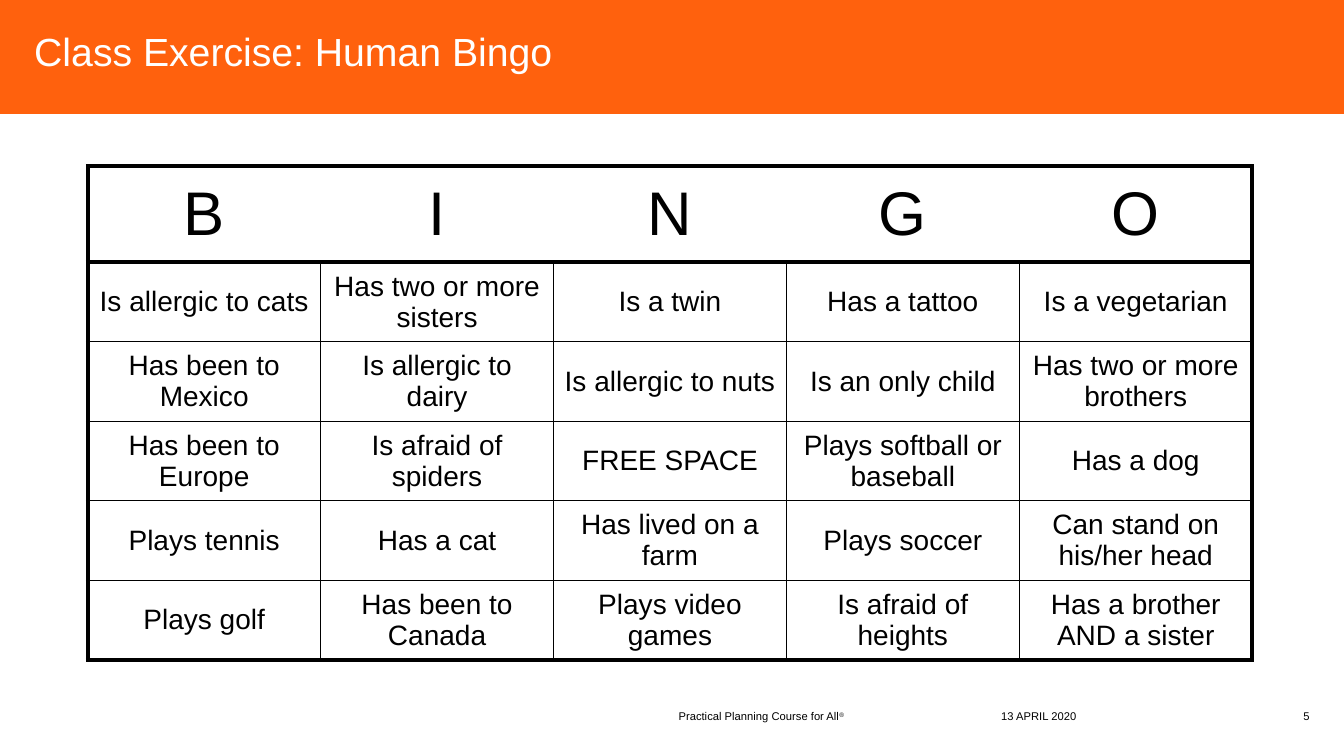
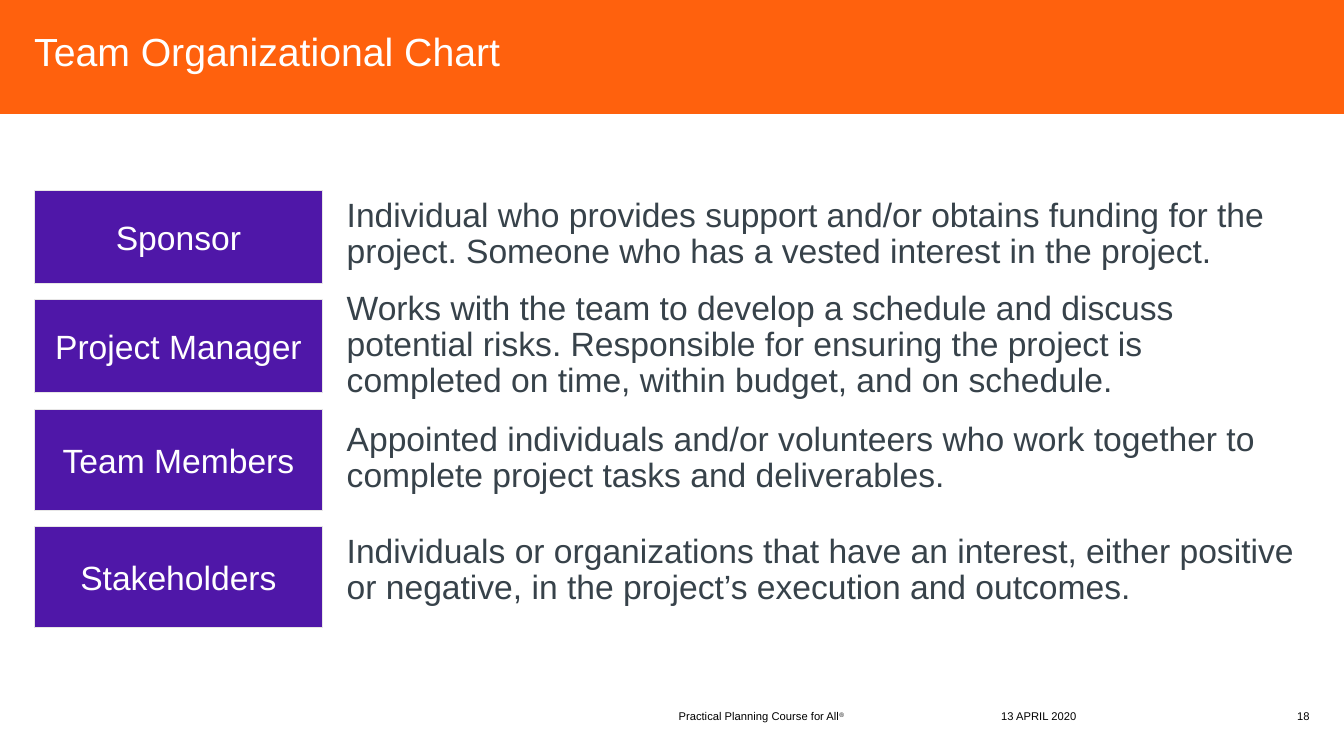
"""Build a bingo card slide and a team roles slide in one shared style."""
from dataclasses import dataclass

import lxml.etree
import pptx
import pptx.dml.color
import pptx.enum.shapes
import pptx.enum.text
import pptx.oxml.ns
import pptx.presentation
import pptx.shapes.base
import pptx.slide
import pptx.table
import pptx.text.text
import pptx.util

Align = pptx.enum.text.PP_ALIGN
Anchor = pptx.enum.text.MSO_ANCHOR

WIDTH, HEIGHT = 13.33, 7.5
FONT = "Arial"
ORANGE, PURPLE, SLATE = "FF610D", "4F17A8", "37424A"
WHITE, BLACK, PALE = "FFFFFF", "000000", "E7E6E6"
MARGIN = 2.55
THICK, THIN = 3, 1


@dataclass(frozen=True)
class Area:
    """A rectangle in percent of the slide's width and height."""
    x: float
    y: float
    w: float
    h: float

    def emu(self) -> tuple[int, int, int, int]:
        return across(self.x), down(self.y), across(self.w), down(self.h)


@dataclass(frozen=True)
class Style:
    """The look of a paragraph and its place in the frame."""
    size: float
    color: str
    align: Align = Align.LEFT
    anchor: Anchor = Anchor.TOP
    spacing: float = 1.0


@dataclass(frozen=True)
class Role:
    """A team role with the heights of its label and its description."""
    name: str
    label_h: float
    text: str
    text_y: float
    text_h: float = 12.53


TITLE = Style(28, WHITE, anchor=Anchor.MIDDLE, spacing=0.9)
FOOTER = Style(8, BLACK, anchor=Anchor.BOTTOM)
PAGE = Style(8, BLACK, Align.RIGHT, Anchor.BOTTOM)
LETTER = Style(44, BLACK, Align.CENTER, Anchor.MIDDLE)
SQUARE = Style(20, BLACK, Align.CENTER, Anchor.MIDDLE)
LABEL = Style(24, WHITE, Align.CENTER, Anchor.MIDDLE)
BODY = Style(24, SLATE, spacing=0.9)

BINGO = [
    list("BINGO"),
    ["Is allergic to cats", "Has two or more sisters", "Is a twin", "Has a tattoo",
     "Is a vegetarian"],
    ["Has been to Mexico", "Is allergic to dairy", "Is allergic to nuts",
     "Is an only child", "Has two or more brothers"],
    ["Has been to Europe", "Is afraid of spiders", "FREE SPACE",
     "Plays softball or baseball", "Has a dog"],
    ["Plays tennis", "Has a cat", "Has lived on a farm", "Plays soccer",
     "Can stand on his/her head"],
    ["Plays golf", "Has been to Canada", "Plays video games", "Is afraid of heights",
     "Has a brother AND a sister"],
]

ROLES = [
    Role("Sponsor", 12.27,
         "Individual who provides support and/or obtains funding for the project. "
         "Someone who has a vested interest in the project.", 25.6),
    Role("Project Manager", 12.27,
         "Works with the team to develop a schedule and discuss potential risks. "
         "Responsible for ensuring the project is completed on time, within budget, "
         "and on schedule.", 37.87, 20),
    Role("Team Members", 13.33,
         "Appointed individuals and/or volunteers who work together to complete "
         "project tasks and deliverables.", 55.2),
    Role("Stakeholders", 13.33,
         "Individuals or organizations that have an interest, either positive or "
         "negative, in the project’s execution and outcomes.", 70),
]


def across(share: float) -> int:
    return pptx.util.Inches(WIDTH * share / 100)


def down(share: float) -> int:
    return pptx.util.Inches(HEIGHT * share / 100)


def rgb(value: str) -> pptx.dml.color.RGBColor:
    return pptx.dml.color.RGBColor.from_string(value)


def add_run(p: pptx.text.text._Paragraph, text: str, style: Style, baseline: int = 0) -> None:
    r = p.add_run()
    r.text = text
    r.font.name = FONT
    r.font.size = pptx.util.Pt(style.size)
    r.font.color.rgb = rgb(style.color)
    if baseline:
        r._r.get_or_add_rPr().set("baseline", str(baseline * 1000))


def write(tf: pptx.text.text.TextFrame, text: str, style: Style) -> pptx.text.text._Paragraph:
    p = tf.paragraphs[0]
    p.alignment = style.align
    p.line_spacing = style.spacing
    add_run(p, text, style)
    return p


def add_text(s: pptx.slide.Slide, area: Area, text: str, style: Style,
             inset: bool = False) -> pptx.text.text._Paragraph:
    tf = s.shapes.add_textbox(*area.emu()).text_frame
    tf.word_wrap = True
    tf.vertical_anchor = style.anchor
    if not inset:
        tf.margin_left = tf.margin_top = tf.margin_right = tf.margin_bottom = 0
    return write(tf, text, style)


def add_box(s: pptx.slide.Slide, area: Area, fill: str,
            line: str = "") -> pptx.shapes.base.BaseShape:
    sp = s.shapes.add_shape(pptx.enum.shapes.MSO_SHAPE.RECTANGLE, *area.emu())
    sp.shadow.inherit = False
    sp.fill.solid()
    sp.fill.fore_color.rgb = rgb(fill)
    if line:
        sp.line.color.rgb = rgb(line)
        sp.line.width = pptx.util.Pt(0.75)
    else:
        sp.line.fill.background()
    return sp


def add_slide(prs: pptx.presentation.Presentation, title: str, number: int) -> pptx.slide.Slide:
    s = prs.slides.add_slide(prs.slide_layouts[6])
    add_box(s, Area(0, 0, 100, 15.07), ORANGE)
    add_text(s, Area(MARGIN, 4.4, 94.82, 5.47), title, TITLE)
    y, h = 92.67, 2.93
    add_text(s, Area(74.49, y, 14.93, h), "13 APRIL 2020", FOOTER)
    p = add_text(s, Area(50.49, y, 22.96, h), "Practical Planning Course for All", FOOTER)
    add_run(p, "®", FOOTER, baseline=30)
    add_text(s, Area(94.07, y, 3.38, h), str(number), PAGE)
    return s


def set_borders(cell: pptx.table._Cell, widths: dict[str, int]) -> None:
    tcPr = cell._tc.get_or_add_tcPr()
    for i, (side, width) in enumerate(widths.items()):
        ln = lxml.etree.Element(pptx.oxml.ns.qn(f"a:ln{side}"), w=str(pptx.util.Pt(width)))
        if width:
            fill = lxml.etree.SubElement(ln, pptx.oxml.ns.qn("a:solidFill"))
            lxml.etree.SubElement(fill, pptx.oxml.ns.qn("a:srgbClr"), val=BLACK)
        else:
            lxml.etree.SubElement(ln, pptx.oxml.ns.qn("a:noFill"))
        tcPr.insert(i, ln)


def add_bingo(s: pptx.slide.Slide) -> None:
    rows, cols = len(BINGO), len(BINGO[0])
    header_h, row_h, col_w = 12.67, 10.53, 17.33
    area = Area(6.53, 22, cols * col_w, header_h + (rows - 1) * row_h)
    table = s.shapes.add_table(rows, cols, *area.emu()).table
    table.first_row = table.horz_banding = False
    for column in table.columns:
        column.width = across(col_w)
    for i, texts in enumerate(BINGO):
        header = i == 0
        inner = 0 if header else THIN
        table.rows[i].height = down(header_h if header else row_h)
        for j, text in enumerate(texts):
            style = LETTER if header else SQUARE
            cell = table.cell(i, j)
            cell.vertical_anchor = style.anchor
            cell.fill.background()
            write(cell.text_frame, text, style)
            set_borders(cell, {
                "L": THICK if j == 0 else inner,
                "R": THICK if j == cols - 1 else inner,
                "T": THICK if i <= 1 else THIN,
                "B": THICK if i in (0, rows - 1) else THIN,
            })


def add_roles(s: pptx.slide.Slide) -> None:
    y, gap = 25.2, 2.2
    for role in ROLES:
        sp = add_box(s, Area(MARGIN, y, 21.46, role.label_h), PURPLE, PALE)
        tf = sp.text_frame
        tf.word_wrap = True
        tf.vertical_anchor = LABEL.anchor
        write(tf, role.name, LABEL)
        add_text(s, Area(25.06, role.text_y, 72.32, role.text_h), role.text, BODY, inset=True)
        y += role.label_h + gap


def main() -> None:
    prs = pptx.Presentation()
    prs.slide_width, prs.slide_height = across(100), down(100)
    add_bingo(add_slide(prs, "Class Exercise: Human Bingo", 5))
    add_roles(add_slide(prs, "Team Organizational Chart", 18))
    prs.save("out.pptx")


if __name__ == "__main__":
    main()
